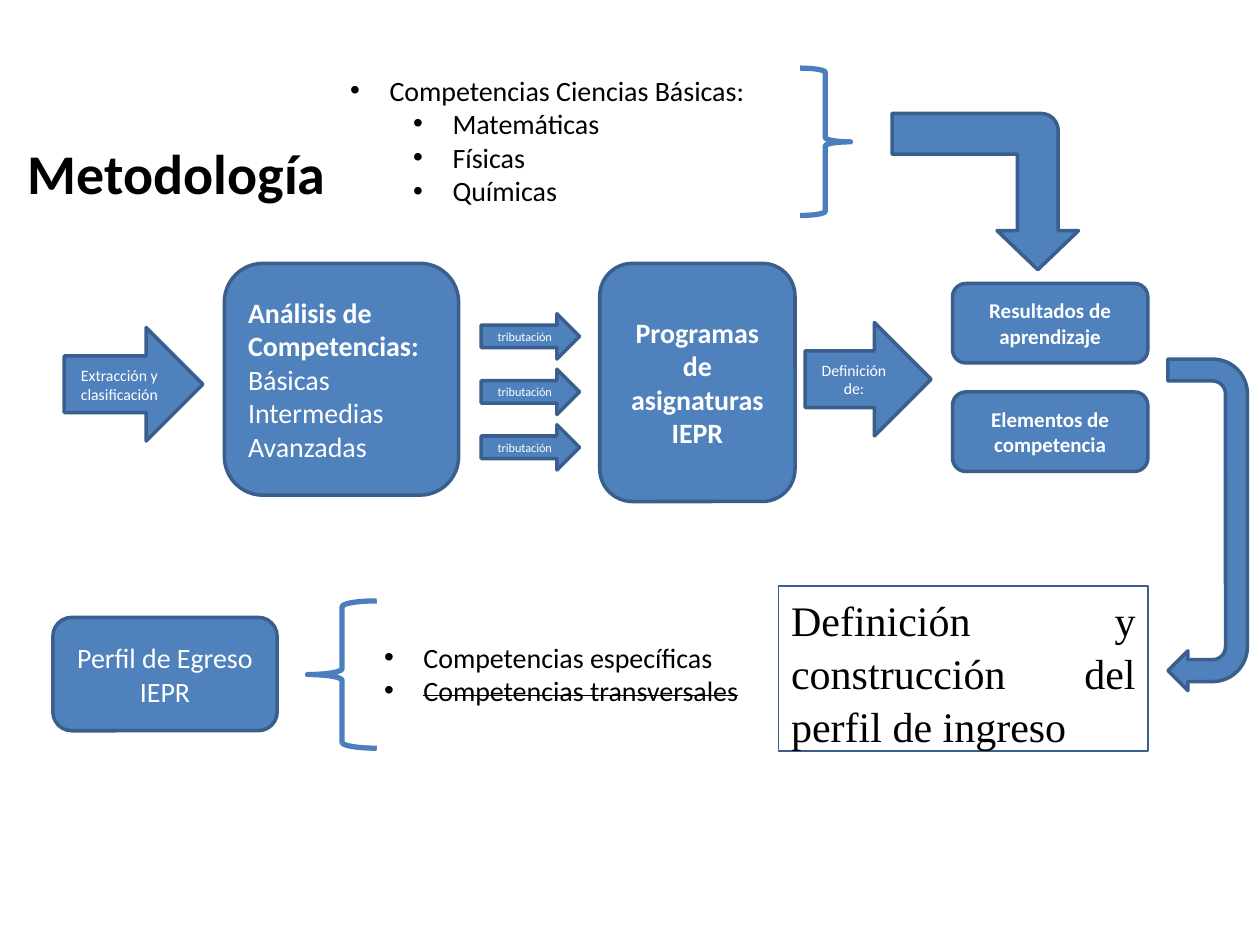
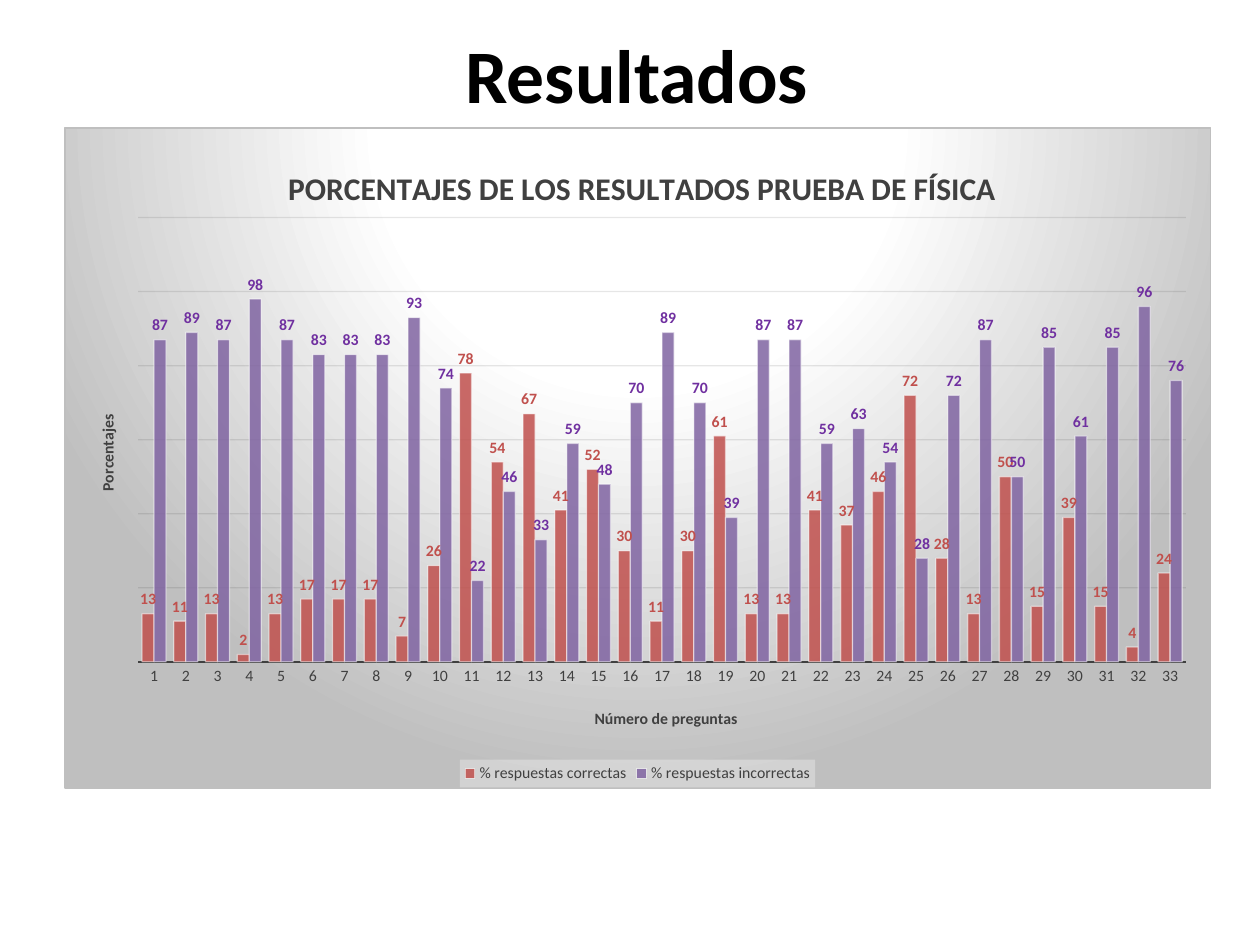
from lxml import etree
from pptx import Presentation
from pptx.chart.data import CategoryChartData
from pptx.dml.color import RGBColor
from pptx.enum.chart import XL_CHART_TYPE as CT, XL_LABEL_POSITION as LP
from pptx.enum.chart import XL_LEGEND_POSITION as LEG, XL_TICK_MARK as TICK
from pptx.enum.shapes import MSO_SHAPE as SHAPE
from pptx.enum.text import MSO_ANCHOR as ANCHOR, MSO_AUTO_SIZE as FIT, PP_ALIGN as ALIGN
from pptx.oxml import parse_xml
from pptx.oxml.ns import nsdecls, qn
from pptx.util import Pt

COLORS = {
    "blue": "4F81BD", "outline": "3A5F8C", "brace": "4B7EBC",
    "white": "FFFFFF", "black": "000000", "gray": "404040",
    "silver": "BFBFBF", "grid": "0D0D0D", "legend": "F2F2F2",
    "red": "C0504D", "purple": "8064A2", "violet": "7030A0",
}
CORRECT = [13, 11, 13, 2, 13, 17, 17, 17, 7, 26, 78, 54, 67, 41, 52, 30, 11,
           30, 61, 13, 13, 41, 37, 46, 72, 28, 13, 50, 15, 39, 15, 4, 24]


def rgb(name):
    return RGBColor.from_string(COLORS[name])


def set_alpha(element, *percents):
    for clr, pct in zip(element.iter(qn("a:srgbClr")), percents):
        etree.SubElement(clr, qn("a:alpha")).set("val", str(pct * 1000))


def place(element, x, y, w=None, h=None, index=0, inner=False):
    layout = element.find(qn("c:layout"))
    if layout is None:
        layout = etree.Element(qn("c:layout"))
        element.insert(index, layout)
    manual = etree.SubElement(layout, qn("c:manualLayout"))
    parts = [("xMode", "edge"), ("yMode", "edge"), ("x", x), ("y", y)]
    if inner:
        parts.insert(0, ("layoutTarget", "inner"))
    if w:
        parts += [("w", w), ("h", h)]
    for tag, val in parts:
        etree.SubElement(manual, qn("c:" + tag)).set("val", str(val))


class Deck:
    font = "Calibri"

    def __init__(self):
        self.prs = Presentation()
        self.prs.slide_width, self.prs.slide_height = Pt(720), Pt(540)

    def new_slide(self, title, box, size):
        self.slide = self.prs.slides.add_slide(self.prs.slide_layouts[5])
        sp = self.slide.shapes.title
        sp.left, sp.top, sp.width, sp.height = map(Pt, box)
        sp.text_frame.auto_size = FIT.NONE
        sp.text_frame.vertical_anchor = ANCHOR.MIDDLE
        self.put_text(sp, [title], size, "black", bold=True)

    def style(self, font, size, color, bold=False, name=None):
        font.name, font.size, font.bold = name or self.font, Pt(size), bold
        font.color.rgb = rgb(color)

    def put_text(self, sp, lines, size, color, bold=False, align=ALIGN.CENTER, name=None):
        tf = sp.text_frame
        tf.word_wrap = True
        tf.text = "\n".join(lines)
        for p in tf.paragraphs:
            p.alignment = align
            for r in p.runs:
                self.style(r.font, size, color, bold, name)
        return tf

    def block(self, kind, box, lines=(), size=16, bold=False, align=ALIGN.CENTER,
              adjust=(), rotation=0):
        sp = self.slide.shapes.add_shape(kind, *map(Pt, box))
        sp.shadow.inherit = False
        sp.fill.solid()
        sp.fill.fore_color.rgb = rgb("blue")
        sp.line.color.rgb, sp.line.width = rgb("outline"), Pt(2)
        sp.rotation = rotation
        for i, value in enumerate(adjust):
            sp.adjustments[i] = value
        if lines:
            tf = self.put_text(sp, lines, size, "white", bold, align)
            tf.vertical_anchor = ANCHOR.MIDDLE
        return sp

    def brace(self, box, rotation=0):
        sp = self.slide.shapes.add_shape(SHAPE.LEFT_BRACE, *map(Pt, box))
        sp.shadow.inherit = False
        sp.fill.background()
        sp.line.color.rgb, sp.line.width = rgb("brace"), Pt(3)
        sp.rotation = rotation

    def framed_text(self, box, text):
        sp = self.slide.shapes.add_textbox(*map(Pt, box))
        sp.line.color.rgb, sp.line.width = rgb("outline"), Pt(0.75)
        tf = self.put_text(sp, [text], 24, "black", align=ALIGN.JUSTIFY,
                           name="Times New Roman")
        tf.paragraphs[0].line_spacing = 1.05

    def bullets(self, box, items):
        sp = self.slide.shapes.add_textbox(*map(Pt, box))
        tf = sp.text_frame
        tf.text = "\n".join(text for text, _ in items)
        for p, (_, level) in zip(tf.paragraphs, items):
            p.level = level
            pPr = p._p.get_or_add_pPr()
            pPr.set("marL", str(Pt(22.5 + 36 * level)))
            pPr.set("indent", str(-Pt(22.5)))
            etree.SubElement(pPr, qn("a:buFont")).set("typeface", "Arial")
            etree.SubElement(pPr, qn("a:buChar")).set("char", "•")
            self.style(p.runs[0].font, 16, "black")
        tf.word_wrap = True
        return tf

    def chart_title(self, title, text, size, x, y, rotation=0):
        tf = title.text_frame
        tf.text = text
        self.style(tf.paragraphs[0].runs[0].font, size, "gray", True)
        tf._txBody.bodyPr.set("rot", str(rotation * 60000))
        place(title._element, x, y)

    def column_chart(self, box, categories, series):
        data = CategoryChartData(number_format="0")
        data.categories = categories
        for name, values, _, _ in series:
            data.add_series(name, values)
        frame = self.slide.shapes.add_chart(CT.COLUMN_CLUSTERED, *map(Pt, box), data)
        chart = frame.chart
        self.style(chart.font, 10, "black")
        plot = chart.plots[0]
        plot.gap_width, plot.vary_by_categories = 65, False
        for ser, (_, _, fill, label) in zip(plot.series, series):
            ser.format.fill.solid()
            ser.format.fill.fore_color.rgb = rgb(fill)
            ser.format.line.color.rgb = rgb("white")
            ser.format.line.width = Pt(0.75)
            set_alpha(ser._element.spPr, 85, 50)
            labels = ser.data_labels
            labels.show_value, labels.position = True, LP.OUTSIDE_END
            labels.number_format, labels.number_format_is_linked = "0", False
            self.style(labels.font, 9, label, True)
        self.chart_axes(chart)
        self.chart_legend(chart)
        self.chart_background(chart)
        place(chart._chartSpace.chart.plotArea, 0.064, 0.136, 0.915, 0.673, inner=True)
        return chart

    def chart_axes(self, chart):
        cat, val = chart.category_axis, chart.value_axis
        cat.major_tick_mark = cat.minor_tick_mark = TICK.NONE
        cat.format.line.color.rgb, cat.format.line.width = rgb("gray"), Pt(1.5)
        self.style(cat.tick_labels.font, 9, "gray")
        val.minimum_scale, val.maximum_scale, val.major_unit = 0, 120, 20
        val.visible = False
        grid = val.major_gridlines.format.line
        grid.color.rgb, grid.width = rgb("grid"), Pt(0.75)
        set_alpha(val._element.find(qn("c:majorGridlines")), 10)

    def chart_legend(self, chart):
        chart.has_legend = True
        legend = chart.legend
        legend.position, legend.include_in_layout = LEG.BOTTOM, False
        self.style(legend.font, 9, "gray")
        spPr = parse_xml(
            f'<c:spPr {nsdecls("c", "a")}><a:solidFill>'
            f'<a:srgbClr val="{COLORS["legend"]}"/></a:solidFill></c:spPr>')
        set_alpha(spPr, 39)
        legend._element.find(qn("c:txPr")).addprevious(spPr)
        place(legend._element, 0.345, 0.957, 0.31, 0.042, index=1)

    def chart_background(self, chart):
        stops = [(0, "white"), (39, "white"), (100, "silver")]
        gs = "".join(f'<a:gs pos="{pos * 1000}"><a:srgbClr val="{COLORS[c]}"/></a:gs>'
                     for pos, c in stops)
        spPr = parse_xml(
            f'<c:spPr {nsdecls("c", "a")}><a:gradFill><a:gsLst>{gs}</a:gsLst>'
            '<a:path path="circle"><a:fillToRect l="50000" t="-80000" r="50000" '
            f'b="180000"/></a:path></a:gradFill><a:ln w="{Pt(0.75)}"><a:solidFill>'
            f'<a:srgbClr val="{COLORS["silver"]}"/></a:solidFill></a:ln></c:spPr>')
        chart._chartSpace.chart.addnext(spPr)


def methodology(deck):
    deck.new_slide("Metodología ", (-3, 75.6, 215.3, 45.4), 32)
    deck.framed_text((445, 334.8, 211, 94.3),
                     "Definición y construcción del perfil de ingreso")
    deck.block(SHAPE.RIGHT_ARROW, (36.7, 187.2, 79.2, 64.8),
               ["Extracción y clasificación"], 9)
    analysis = deck.block(
        SHAPE.ROUNDED_RECTANGLE, (128.2, 150.5, 133.9, 132.5),
        ["Análisis de Competencias:", "Básicas", "Intermedias", "Avanzadas"],
        align=ALIGN.LEFT)
    analysis.text_frame.paragraphs[0].runs[0].font.bold = True
    deck.block(SHAPE.ROUNDED_RECTANGLE, (30.2, 352.8, 128.2, 64.8),
               ["Perfil de Egreso IEPR"])
    for i in range(3):
        deck.block(SHAPE.RIGHT_ARROW, (275, 179.3 + 31.7 * i, 56.2, 25.9),
                   ["tributación"], 7)
    deck.block(SHAPE.ROUNDED_RECTANGLE, (342.7, 150.5, 111.6, 136.1),
               ["Programas de asignaturas IEPR"], bold=True)
    deck.block(SHAPE.RIGHT_ARROW, (460.1, 184.3, 72, 64.8), ["Definición de:"], 9)
    for i, text in enumerate(["Resultados de aprendizaje", "Elementos de competencia"]):
        deck.block(SHAPE.ROUNDED_RECTANGLE, (544.3, 162 + 62 * i, 111.6, 45.4),
                   [text], 12, bold=True)
    deck.block(SHAPE.U_TURN_ARROW, (595.4, 277.2, 189.4, 45.4),
               adjust=(0.276, 0.25, 0.25, 0.438, 1), rotation=90)
    deck.brace((175.7, 343.4, 39.6, 84.2))
    profile = deck.bullets((212.4, 362.2, 244.8, 46),
                           [("Competencias específicas", 0),
                            ("Competencias transversales", 0)])
    profile.paragraphs[1].runs[0]._r.get_or_add_rPr().set("strike", "sngStrike")
    deck.bullets((193, 38.2, 282.2, 85),
                 [("Competencias Ciencias Básicas:", 0), ("Matemáticas", 1),
                  ("Físicas", 1), ("Químicas", 1)])
    deck.brace((457.2, 38.9, 28.8, 84.2), rotation=180)
    deck.block(SHAPE.BENT_ARROW, (518.4, 56.2, 89.3, 106.6),
               adjust=(0.261, 0.261, 0.25, 0.109), rotation=90)


def results(deck):
    deck.new_slide("Resultados", (56.2, 13, 615.6, 57.6), 43.2)
    chart = deck.column_chart(
        (36.7, 72.7, 655.2, 378), [str(n + 1) for n in range(len(CORRECT))],
        [("% respuestas correctas", CORRECT, "red", "red"),
         ("% respuestas incorrectas", [100 - v for v in CORRECT], "purple", "violet")])
    deck.chart_title(chart.chart_title, "PORCENTAJES DE LOS RESULTADOS PRUEBA DE FÍSICA",
                     18, 0.19, 0.05)
    deck.chart_title(chart.category_axis.axis_title, "Número de preguntas",
                     9, 0.46, 0.875)
    deck.chart_title(chart.value_axis.axis_title, "Porcentajes",
                     9, 0.026, 0.43, rotation=-90)


def main():
    deck = Deck()
    methodology(deck)
    results(deck)
    deck.prs.save("out.pptx")


if __name__ == "__main__":
    main()
